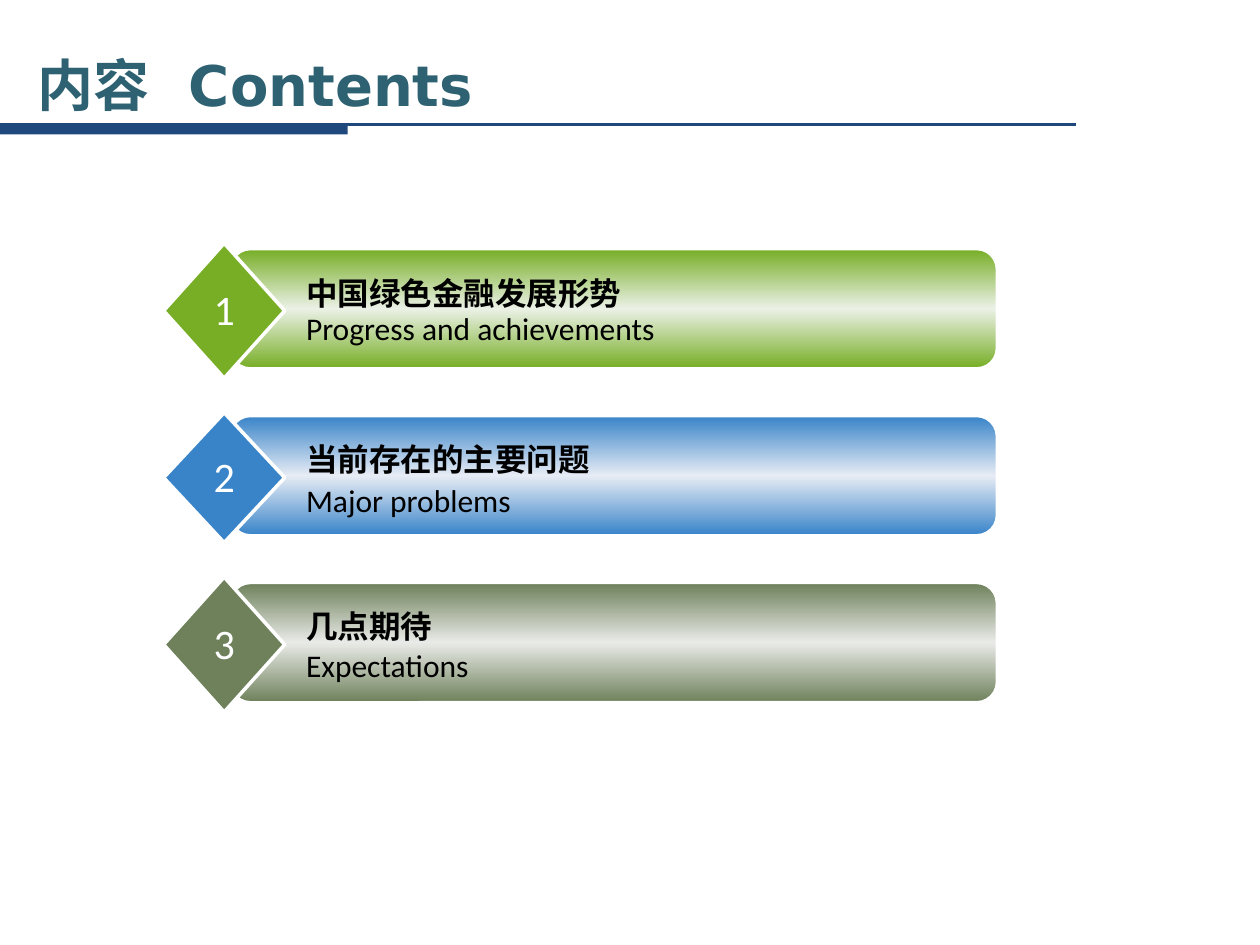
from copy import deepcopy
from pptx import Presentation
from pptx.dml.color import RGBColor
from pptx.enum import shapes, text
from pptx.oxml import parse_xml
from pptx.oxml.ns import nsdecls
from pptx.util import Cm, Pt

TITLE = "内容\tContents"
# heading, subtitle, subtitle width, subtitle offset, diamond height, colour, shine
ROWS = [
    ("中国绿色金融发展形势", "Progress and achievements", 7.62, 1.07, 2.72, "77AE26", "EBF1E6"),
    ("当前存在的主要问题", "Major problems", 4.67, 1.17, 2.62, "3984C9", "E7ECF5"),
    ("几点期待", "Expectations", 3.84, 1.14, 2.72, "6E815B", "EAEBE8"),
]
THEME = {
    "navy": "1F497D", "teal": "2E6272", "black": "000000", "white": "FFFFFF",
    "head": "DejaVu Sans", "body": "Calibri",
    "title": 32, "number": 24, "label": 18,
}
TOP, PITCH, BAR_H = 5.03, 3.365, 2.39
BAR_X, BAR_W = 4.65, 15.44
GEM_X, GEM_W = 3.3, 2.44
TEXT_X, HEAD_W, LINE_H = 5.92, 13.59, 1.02
NUM_W, NUM_H = 1.7, 1.3
KIND = shapes.MSO_SHAPE


def rgb(code):
    return RGBColor.from_string(code)


def add_shape(home, kind, box, color, edge=0):
    shape = home.add_shape(kind, *map(Cm, box))
    shape.shadow.inherit = False
    shape.fill.solid()
    shape.fill.fore_color.rgb = rgb(color)
    if edge:
        shape.line.color.rgb = rgb(THEME["white"])
        shape.line.width = Pt(edge)
    else:
        shape.line.fill.background()
    return shape


def add_text(home, words, box, size, color, face="body", bold=False, wrap=True,
             align=text.PP_ALIGN.LEFT, tab=None):
    item = home.add_textbox(*map(Cm, box))
    frame = item.text_frame
    frame.word_wrap = wrap
    frame.text = words
    para = frame.paragraphs[0]
    para.alignment = align
    if tab:
        para._p.get_or_add_pPr().append(parse_xml(
            f'<a:tabLst {nsdecls("a")}><a:tab pos="{Cm(tab)}" algn="l"/></a:tabLst>'))
    font = para.runs[0].font
    font.name, font.size, font.bold = THEME[face], Pt(THEME[size]), bold
    font.color.rgb = rgb(THEME[color])
    return frame


def shade(fill, color, shine):
    """Fade from color to shine at mid-height and back."""
    fill.gradient()
    fill.gradient_angle = 270
    first = fill.gradient_stops[0]._gs
    first.addnext(deepcopy(first))
    for stop, code, place in zip(fill.gradient_stops, (color, shine, color), (0, 0.5, 1)):
        stop.color.rgb = rgb(code)
        stop.position = place


def add_header(home):
    rule = home.add_connector(shapes.MSO_CONNECTOR.STRAIGHT,
                              Cm(0), Cm(2.51), Cm(21.69), Cm(2.51))
    rule.line.color.rgb = rgb(THEME["navy"])
    rule.line.width = Pt(1.5)
    rule._element.spPr.append(parse_xml(f'<a:effectLst {nsdecls("a")}/>'))
    add_shape(home, KIND.RECTANGLE, (0, 2.51, 7.01, 0.2), THEME["navy"])
    frame = add_text(home, TITLE, (0.51, 0.91, 21.39, 1.57), "title", "teal",
                     face="head", bold=True, tab=3.05)
    frame.vertical_anchor = text.MSO_ANCHOR.MIDDLE


def add_row(home, index, row):
    head, sub, sub_w, sub_y, gem_h, color, shine = row
    y = TOP + index * PITCH
    mid = y + BAR_H / 2 + 0.04
    bar = add_shape(home, KIND.ROUNDED_RECTANGLE, (BAR_X, y, BAR_W, BAR_H), color, 1)
    bar.adjustments[0] = 0.167
    shade(bar.fill, color, shine)
    add_shape(home, KIND.DIAMOND, (GEM_X, mid - gem_h / 2, GEM_W, gem_h), color, 2)
    add_text(home, head, (TEXT_X, y + 0.36, HEAD_W, LINE_H), "label", "black", bold=True)
    add_text(home, str(index + 1), (GEM_X + (GEM_W - NUM_W) / 2, y + 0.57, NUM_W, NUM_H),
             "number", "white", align=text.PP_ALIGN.CENTER)
    add_text(home, sub, (TEXT_X, y + sub_y, sub_w, LINE_H), "label", "black", wrap=False)


def main():
    deck = Presentation()
    deck.slide_width, deck.slide_height = Cm(25.4), Cm(19.05)
    slide = deck.slides.add_slide(deck.slide_layouts[6])
    add_header(slide.shapes)
    for index, row in enumerate(ROWS):
        add_row(slide.shapes.add_group_shape().shapes, index, row)
    deck.save("out.pptx")


if __name__ == "__main__":
    main()
